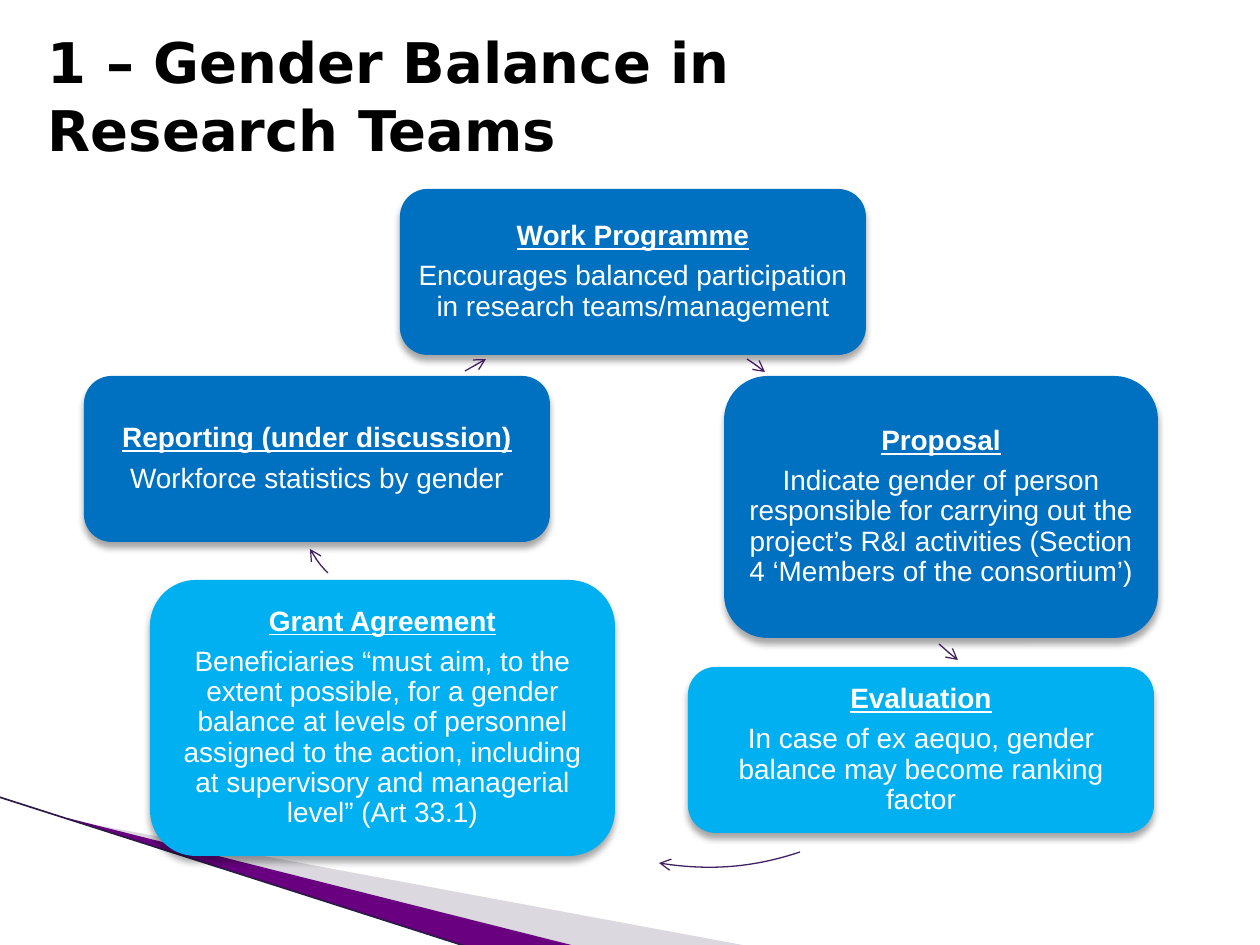
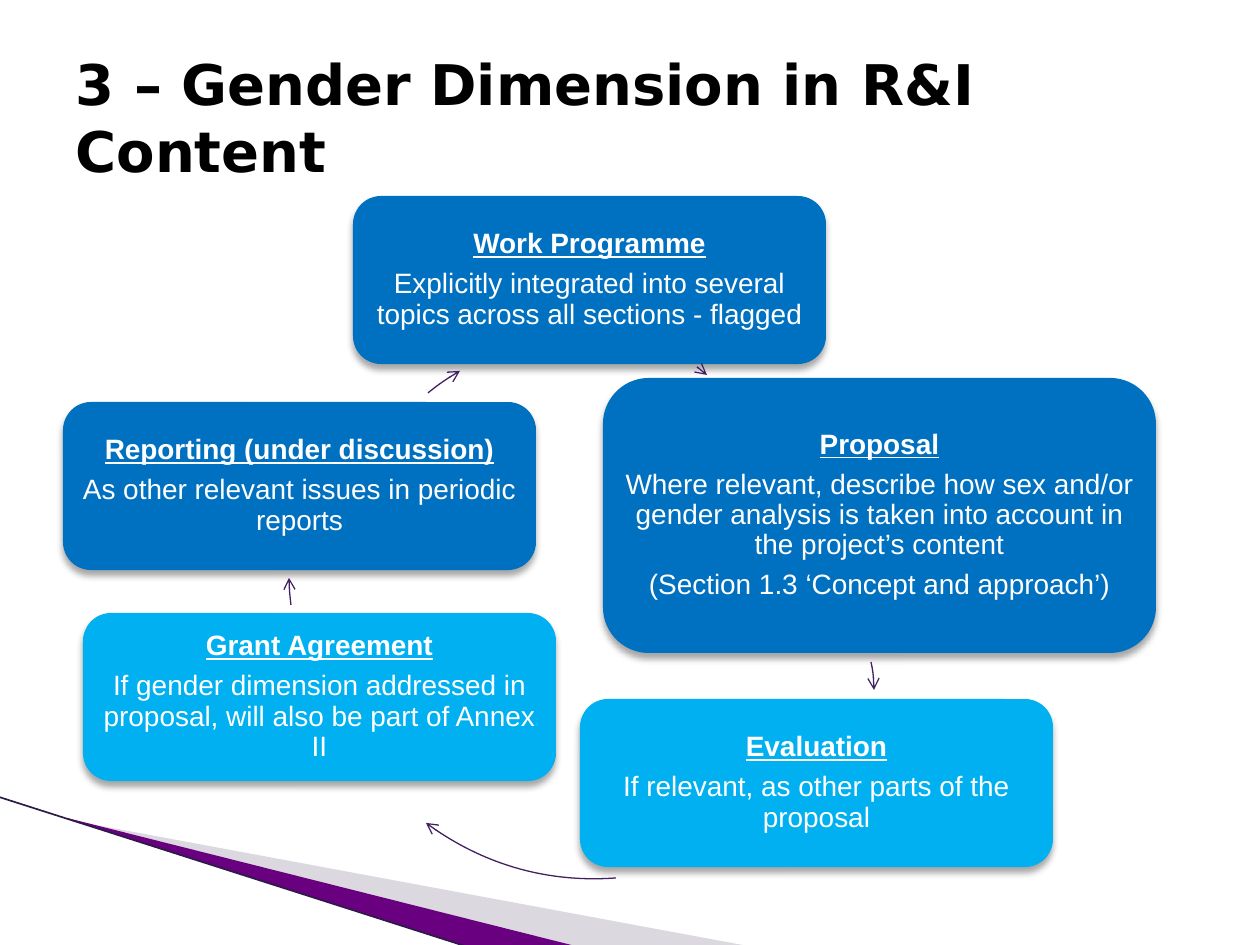
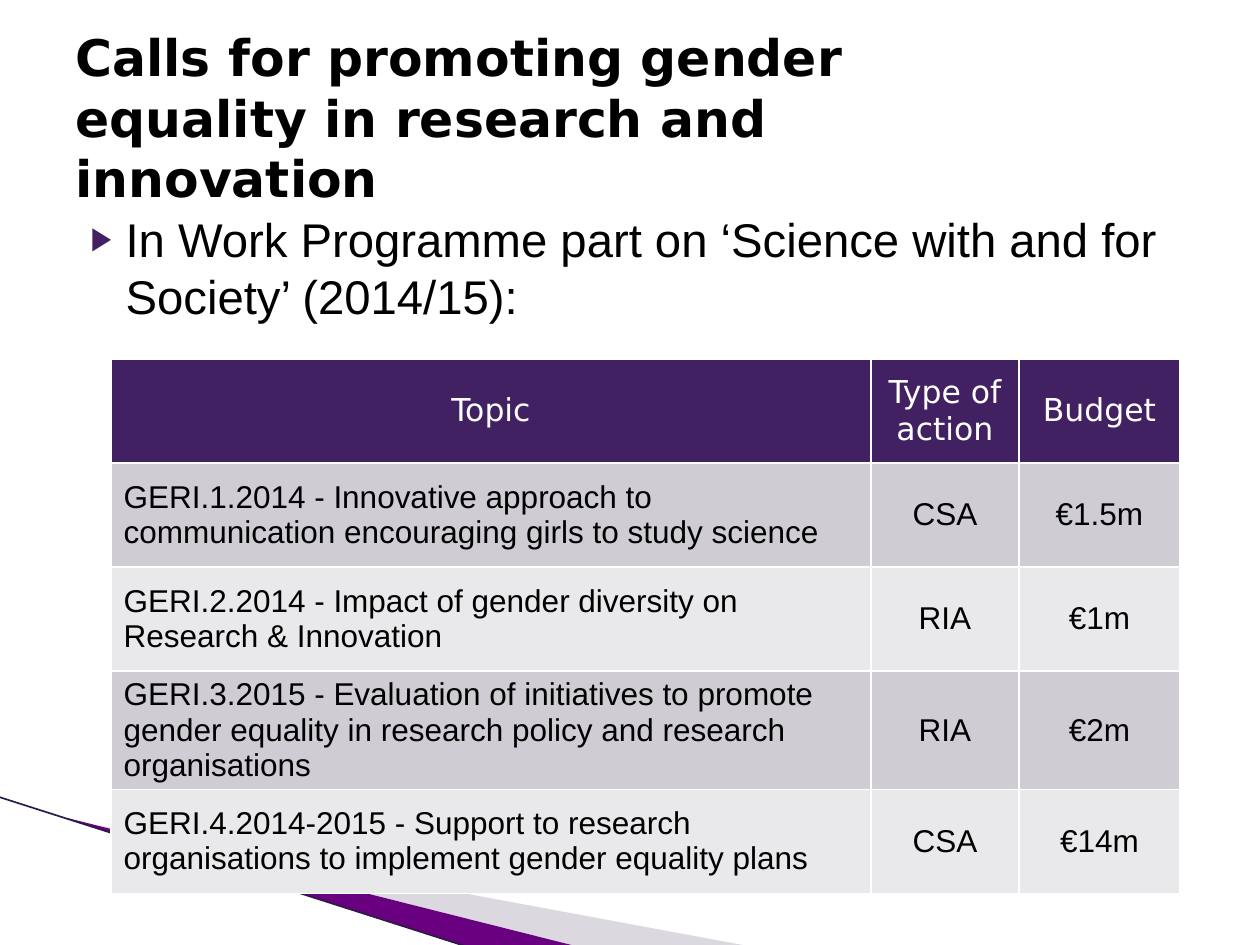
from lxml import etree
from pptx import Presentation
from pptx.dml.color import RGBColor
from pptx.enum.shapes import MSO_CONNECTOR, MSO_SHAPE
from pptx.enum.text import MSO_ANCHOR, MSO_AUTO_SIZE, PP_ALIGN
from pptx.oxml import parse_xml
from pptx.oxml.ns import nsdecls, qn
from pptx.util import Pt

PX = 914400 / 126
COLORS = {
    "black": "000000",
    "white": "FFFFFF",
    "purple": "422163",
    "wing": "68007F",
    "wing_shade": "A7A2B1",
    "edge": "2E1A47",
    "blue": "0070C0",
    "sky": "00B0F0",
    "row_odd": "CFCDD3",
    "row_even": "E9E8EA",
}
TITLE_FONT = "DejaVu Sans"
TEXT_FONT = "Arial"
FRAME = {"word_wrap": True, "auto_size": MSO_AUTO_SIZE.NONE}
BOX_INSETS = ("margin_left", "margin_top", "margin_right", "margin_bottom")

# Each box: place, colour, heading, body paragraphs.
# Each arrow: top left of the circle it follows, four Bézier points.
BALANCE = {
    "boxes": [
        ((400, 189, 466, 166), "blue", "Work Programme",
         ["Encourages balanced participation in research teams/management"]),
        ((724, 376, 434, 262), "blue", "Proposal",
         ["Indicate gender of person responsible for carrying out the project’s "
          "R&I activities (Section 4 ‘Members of the consortium’)"]),
        ((688, 667, 466, 166), "sky", "Evaluation",
         ["In case of ex aequo, gender balance may become ranking factor"]),
        ((150, 580, 465, 276), "sky", "Grant Agreement",
         ["Beneficiaries “must aim, to the extent possible, for a gender balance "
          "at levels of personnel assigned to the action, including at "
          "supervisory and managerial level” (Art 33.1)"]),
        ((84, 376, 466, 166), "blue", "Reporting (under discussion)",
         ["Workforce statistics by gender"]),
    ],
    "circle": 561,
    "arrows": [
        ((306, 307), [(747, 359), (753, 363), (759, 367), (765, 372)]),
        ((479, 577), [(939, 644), (945, 649), (951, 655), (958, 660)]),
        ((427, 307), [(800, 852), (755, 867), (707, 871), (659, 863)]),
        ((260, 110), [(328, 573), (321, 566), (315, 558), (310, 549)]),
        ((338, 325), [(465, 371), (472, 367), (479, 363), (486, 359)]),
    ],
}
DIMENSION = {
    "boxes": [
        ((353, 196, 473, 168), "blue", "Work Programme",
         ["Explicitly integrated into several topics across all sections - flagged"]),
        ((603, 378, 553, 275), "blue", "Proposal",
         ["Where relevant, describe how sex and/or gender analysis is taken into "
          "account in the project’s content",
          "(Section 1.3 ‘Concept and approach’)"]),
        ((580, 699, 473, 168), "sky", "Evaluation",
         ["If relevant, as other parts of the proposal"]),
        ((83, 613, 473, 168), "sky", "Grant Agreement",
         ["If gender dimension addressed in proposal, will also be part of Annex II"]),
        ((63, 402, 473, 168), "blue", "Reporting (under discussion)",
         ["As other relevant issues in periodic reports"]),
    ],
    "circle": 567,
    "arrows": [
        ((239, 307), [(697, 367), (700, 369), (703, 372), (707, 375)]),
        ((307, 422), [(871, 662), (873, 671), (874, 680), (874, 690)]),
        ((312, 311), [(616, 878), (548, 883), (480, 863), (426, 823)]),
        ((289, 282), [(291, 605), (290, 596), (289, 587), (289, 578)]),
        ((324, 329), [(428, 393), (438, 385), (448, 378), (460, 371)]),
    ],
}
CALLS = [
    ("Topic", "Type of action", "Budget"),
    ("GERI.1.2014 - Innovative approach to communication encouraging girls to "
     "study science", "CSA", "€1.5m"),
    ("GERI.2.2014 - Impact of gender diversity on Research & Innovation",
     "RIA", "€1m"),
    ("GERI.3.2015 - Evaluation of initiatives to promote gender equality in "
     "research policy and research organisations", "RIA", "€2m"),
    ("GERI.4.2014-2015 - Support to research organisations to implement gender "
     "equality plans", "CSA", "€14m"),
]


def px(n):
    return round(n * PX)


def rgb(name):
    return RGBColor.from_string(COLORS[name])


def set_attrs(obj, values):
    for name, value in values.items():
        setattr(obj, name, value)


def place(shape, box):
    set_attrs(shape, dict(zip(("left", "top", "width", "height"), map(px, box))))


def set_font(font, size, color, name=TEXT_FONT, bold=False, underline=False):
    set_attrs(font, {"size": Pt(size), "name": name, "bold": bold,
                     "underline": underline})
    font.color.rgb = rgb(color)


def fill_solid(shape, color):
    shape.fill.solid()
    shape.fill.fore_color.rgb = rgb(color)


def add_outline(s, points, close):
    start, *rest = [(px(x), px(y)) for x, y in points]
    builder = s.shapes.build_freeform(*start)
    builder.add_line_segments(rest, close=close)
    shape = builder.convert_to_shape()
    shape.shadow.inherit = False
    return shape


def add_wing(s, points, color, alpha=100):
    wing = add_outline(s, points, close=True)
    fill_solid(wing, color)
    wing.line.fill.background()
    tint = wing.element.find(".//" + qn("a:srgbClr"))
    etree.SubElement(tint, qn("a:alpha"), val=str(alpha * 1000))
    return wing


def add_edge(s, start, end):
    edge = s.shapes.add_connector(MSO_CONNECTOR.STRAIGHT, *map(px, start + end))
    edge.line.color.rgb = rgb("edge")
    edge.line.width = Pt(0.95)
    etree.SubElement(edge.element.spPr, qn("a:effectLst"))
    return edge


def decorate_master(prs, s):
    """Draw the corner wings on slide s and move them to the slide master."""
    tree = prs.slide_master.shapes.element
    parts = [
        add_wing(s, [(69, 820), (748, 946), (575, 946), (69, 819)],
                 "wing_shade", 40),
        add_wing(s, [(67, 818), (575, 946), (469, 947), (68, 819)], "wing"),
        add_edge(s, (-1, 797), (468, 947)),
    ]
    for i, part in enumerate(parts):
        part.element.find(".//" + qn("p:cNvPr")).set("id", str(100 + i))
        tree.insert(2 + i, part.element)


def add_title(s, text, left=63, top=38, size=32):
    title = s.shapes.title
    place(title, (left, top, 994, 158))
    tf = title.text_frame
    set_attrs(tf, {**FRAME, "vertical_anchor": MSO_ANCHOR.MIDDLE})
    p = tf.paragraphs[0]
    p.alignment = PP_ALIGN.LEFT
    r = p.add_run()
    r.text = text
    set_font(r.font, size, "black", TITLE_FONT, bold=True)


def add_shadow(shape):
    shape.element.spPr.append(parse_xml(
        f'<a:effectLst {nsdecls("a")}><a:outerShdw blurRad="50800" dist="38100" '
        f'dir="5400000" rotWithShape="0"><a:srgbClr val="{COLORS["black"]}">'
        '<a:alpha val="35000"/></a:srgbClr></a:outerShdw></a:effectLst>'))


def add_step(s, box, color, heading, body):
    step = s.shapes.add_shape(MSO_SHAPE.ROUNDED_RECTANGLE, *map(px, box))
    fill_solid(step, color)
    step.line.fill.background()
    add_shadow(step)
    tf = step.text_frame
    set_attrs(tf, {**FRAME, "vertical_anchor": MSO_ANCHOR.MIDDLE,
                   **dict.fromkeys(BOX_INSETS, px(9))})
    for i, text in enumerate([heading, *body]):
        p = tf.add_paragraph() if i else tf.paragraphs[0]
        set_attrs(p, {"alignment": PP_ALIGN.CENTER, "line_spacing": 0.9,
                      "space_after": Pt(5.6)})
        r = p.add_run()
        r.text = text
        set_font(r.font, 16, "white", bold=i == 0, underline=i == 0)


def add_curved_arrow(s, corner, size, points):
    """Draw one cubic Bézier arrow in the frame of the circle it follows."""
    arrow = add_outline(s, points, close=False)
    place(arrow, (*corner, size, size))
    arrow.fill.background()
    arrow.line.color.rgb = rgb("purple")
    arrow.line.width = Pt(0.75)
    outline = arrow.element.find(".//" + qn("a:path"))
    for side in ("w", "h"):
        outline.set(side, str(px(size)))
    segments = outline.findall(qn("a:lnTo"))
    curve = etree.SubElement(outline, qn("a:cubicBezTo"))
    for segment in segments:
        curve.append(segment[0])
        outline.remove(segment)
    for pt, point in zip(outline.iter(qn("a:pt")), points):
        for axis, value, origin in zip("xy", point, corner):
            pt.set(axis, str(px(value - origin)))
    ln = arrow.element.spPr.find(qn("a:ln"))
    etree.SubElement(ln, qn("a:tailEnd"), type="arrow")


def add_cycle(s, cycle):
    for step in cycle["boxes"]:
        add_step(s, *step)
    for corner, points in cycle["arrows"]:
        add_curved_arrow(s, corner, cycle["circle"], points)


def add_bullet(s, text):
    body = s.placeholders[1]
    place(body, (63, 204, 1134, 624))
    tf = body.text_frame
    set_attrs(tf, FRAME)
    p = tf.paragraphs[0]
    pPr = p._p.get_or_add_pPr()
    pPr.set("marL", str(px(50)))
    pPr.set("indent", str(-px(35)))
    color = etree.SubElement(pPr, qn("a:buClr"))
    etree.SubElement(color, qn("a:srgbClr"), val=COLORS["purple"])
    etree.SubElement(pPr, qn("a:buSzPct"), val="68000")
    etree.SubElement(pPr, qn("a:buChar"), char="▶")
    p.space_before = Pt(0)
    r = p.add_run()
    r.text = text
    set_font(r.font, 27, "black")


def add_calls_table(s, rows, left, top, widths, row_height):
    box = (left, top, sum(widths), row_height * len(rows))
    table = s.shapes.add_table(len(rows), len(widths), *map(px, box)).table
    for column, width in zip(table.columns, widths):
        column.width = px(width)
    for i, row in enumerate(rows):
        table.rows[i].height = px(row_height)
        header = i == 0
        fill = "purple" if header else ("row_even", "row_odd")[i % 2]
        for j, text in enumerate(row):
            cell = table.cell(i, j)
            fill_solid(cell, fill)
            cell.vertical_anchor = MSO_ANCHOR.MIDDLE
            p = cell.text_frame.paragraphs[0]
            p.alignment = PP_ALIGN.CENTER if header or j else PP_ALIGN.LEFT
            r = p.add_run()
            r.text = text
            set_font(r.font, 18, "white" if header else "black",
                     TITLE_FONT if header else TEXT_FONT)


def main():
    prs = Presentation()
    set_attrs(prs, {"slide_width": px(1260), "slide_height": px(945)})
    title_and_content, title_only = prs.slide_layouts[1], prs.slide_layouts[5]

    s = prs.slides.add_slide(title_only)
    decorate_master(prs, s)
    add_title(s, "1 – Gender Balance in Research Teams", left=35, top=16)
    add_cycle(s, BALANCE)

    s = prs.slides.add_slide(title_only)
    add_title(s, "3 – Gender Dimension in R&I Content")
    add_cycle(s, DIMENSION)

    s = prs.slides.add_slide(title_and_content)
    add_title(s, "Calls for promoting gender equality in research and innovation",
              size=28.8)
    add_bullet(s, "In Work Programme part on ‘Science with and for Society’ (2014/15):")
    add_calls_table(s, CALLS, 111, 359, (760, 148, 161), 104)

    prs.save("out.pptx")


if __name__ == "__main__":
    main()
